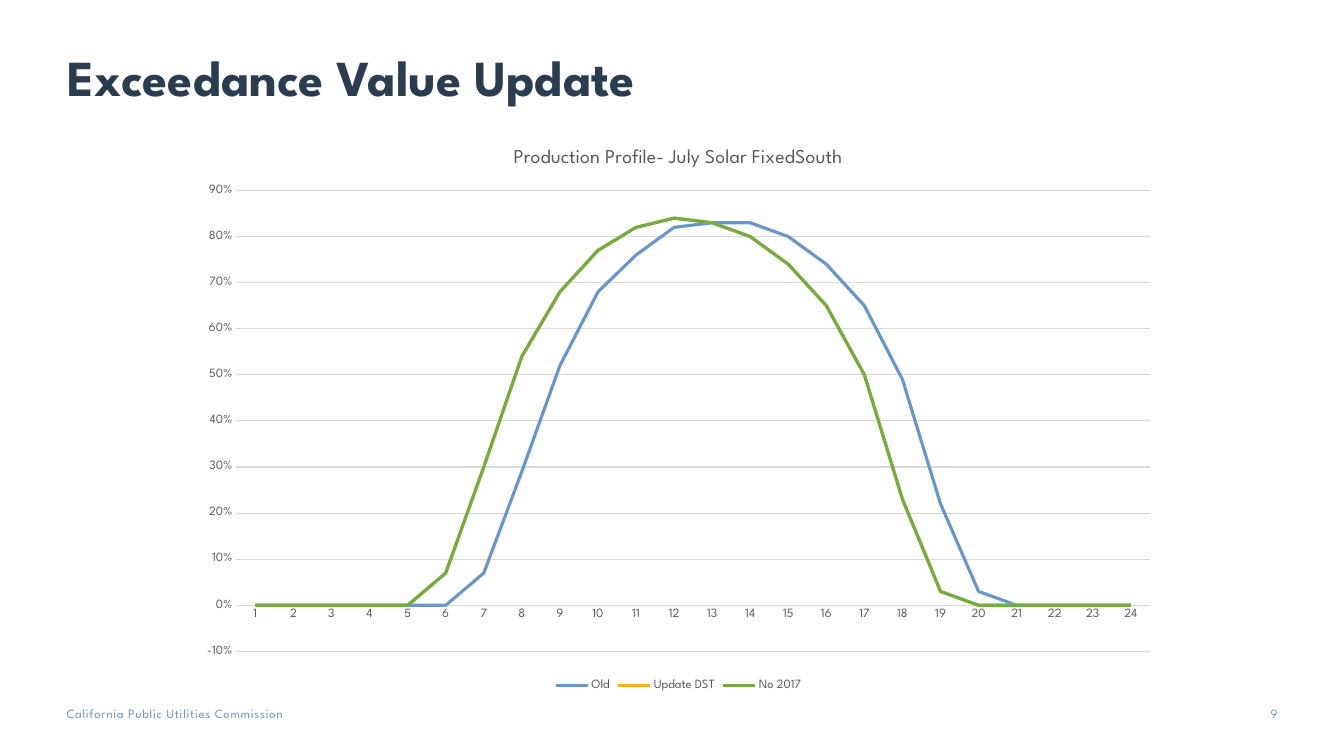
from pptx import Presentation
from pptx.chart.data import CategoryChartData
from pptx.dml.color import RGBColor
from pptx.enum.chart import XL_CHART_TYPE, XL_LEGEND_POSITION, XL_TICK_MARK
from pptx.enum.text import MSO_ANCHOR, PP_ALIGN
from pptx.util import Inches, Pt

FONT = "League Spartan"
NAVY, BLUE, AMBER, GREEN = "2A3C50", "6996C9", "FBAD22", "70AD45"
GRAY, RULE = "595959", "D9D9D9"

NIGHT = [0] * 5
DAYLIGHT = [0.07, 0.3, 0.54, 0.68, 0.77, 0.82, 0.84,
            0.83, 0.8, 0.74, 0.65, 0.5, 0.23, 0.03]
UPDATED = NIGHT + DAYLIGHT + NIGHT
OLD = [0] * 6 + [0.07, 0.29, 0.52, 0.68, 0.76, 0.82, 0.83,
                 0.83, 0.8, 0.74, 0.65, 0.49, 0.22, 0.03] + [0] * 4
SERIES = [("Old", OLD, BLUE), ("Update DST", UPDATED, AMBER), ("No 2017", UPDATED, GREEN)]


def rgb(value):
    return RGBColor.from_string(value)


def style_font(font, size, color, bold=False):
    font.name = FONT
    font.size = Pt(size)
    font.bold = bold
    font.color.rgb = rgb(color)


def style_line(line, color, width):
    line.color.rgb = rgb(color)
    line.width = Pt(width)


def add_text(slide, box, text, size, color, bold=False, align=PP_ALIGN.LEFT,
             anchor=MSO_ANCHOR.TOP, insets=(0, 0, 0, 0), spacing=0):
    tf = slide.shapes.add_textbox(*map(Inches, box)).text_frame
    tf.word_wrap = True
    tf.vertical_anchor = anchor
    tf.margin_left, tf.margin_top, tf.margin_right, tf.margin_bottom = map(Inches, insets)
    p = tf.paragraphs[0]
    p.alignment = align
    r = p.add_run()
    r.text = text
    style_font(r.font, size, color, bold)
    if spacing:
        r.font._element.set("spc", str(int(spacing * 100)))


def add_title(slide, box):
    add_text(slide, box, "Exceedance Value Update", 36, NAVY, bold=True,
             anchor=MSO_ANCHOR.BOTTOM, insets=(0, 0.05, 0.1, 0.05))


def add_footer(slide, box):
    left, top, width, height = box
    number_width = 0.42
    add_text(slide, (left, top, 3.21, height), "California Public Utilities Commission",
             9, BLUE, spacing=0.5)
    add_text(slide, (left + width - number_width, top, number_width, height), "9",
             9, BLUE, align=PP_ALIGN.RIGHT)


def add_profile_chart(slide, box):
    data = CategoryChartData(number_format="0%")
    data.categories = [str(hour) for hour in range(1, 25)]
    for name, values, _ in SERIES:
        data.add_series(name, values)
    chart = slide.shapes.add_chart(XL_CHART_TYPE.LINE, *map(Inches, box), data).chart
    style_font(chart.font, 10, "000000")

    chart.has_title = True
    r = chart.chart_title.text_frame.paragraphs[0].add_run()
    r.text = "Production Profile- July Solar FixedSouth"
    style_font(r.font, 14, GRAY)

    chart.has_legend = True
    chart.legend.position = XL_LEGEND_POSITION.BOTTOM
    chart.legend.include_in_layout = False
    style_font(chart.legend.font, 9, GRAY)

    for axis in (chart.category_axis, chart.value_axis):
        axis.major_tick_mark = axis.minor_tick_mark = XL_TICK_MARK.NONE
        style_font(axis.tick_labels.font, 9, GRAY)
    style_line(chart.category_axis.format.line, RULE, 0.75)

    value_axis = chart.value_axis
    value_axis.minimum_scale, value_axis.maximum_scale = -0.1, 0.9
    value_axis.major_unit = 0.1
    value_axis.format.line.fill.background()
    value_axis.has_major_gridlines = True
    style_line(value_axis.major_gridlines.format.line, RULE, 0.75)
    value_axis.tick_labels.number_format = "0%"
    value_axis.tick_labels.number_format_is_linked = False

    chart.plots[0].vary_by_categories = False
    for series, (_, _, color) in zip(chart.plots[0].series, SERIES):
        series.smooth = False
        style_line(series.format.line, color, 2.25)


def main():
    prs = Presentation()
    prs.slide_width, prs.slide_height = Inches(13.33), Inches(7.5)
    slide = prs.slides.add_slide(prs.slide_layouts[6])
    add_footer(slide, (0.66, 7, 12.01, 0.2))
    add_title(slide, (0.67, 0.4, 12.01, 0.71))
    add_profile_chart(slide, (1.86, 1.26, 9.74, 5.64))
    prs.save("out.pptx")


if __name__ == "__main__":
    main()
